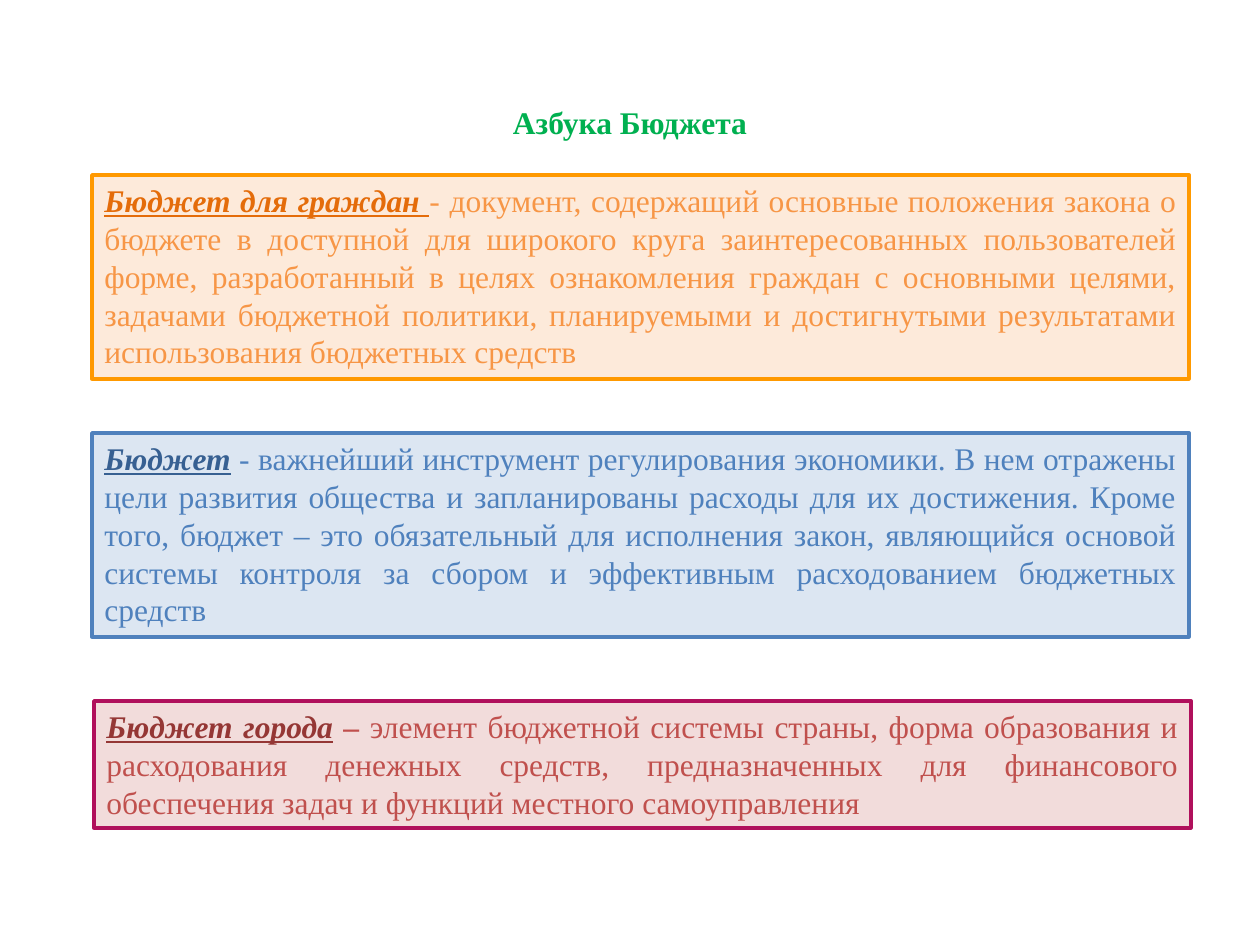
from dataclasses import dataclass

from pptx import Presentation
from pptx.dml.color import RGBColor
from pptx.enum.shapes import MSO_SHAPE
from pptx.enum.text import MSO_ANCHOR, PP_ALIGN
from pptx.util import Emu, Pt

RECTANGLE = MSO_SHAPE.RECTANGLE
TOP, BOTTOM = MSO_ANCHOR.TOP, MSO_ANCHOR.BOTTOM
CENTER, JUSTIFY = PP_ALIGN.CENTER, PP_ALIGN.JUSTIFY
TITLE_ONLY = 5
EMU_PER_PX = 914400 / 126


@dataclass(frozen=True)
class Tone:
    fill: str
    line: str
    term: str
    text: str


@dataclass(frozen=True)
class Theme:
    font: str = "Times New Roman"
    size: int = 18
    line_width: int = 2
    title: str = "00B050"
    orange: Tone = Tone("FDEADA", "FF9900", "E46C0A", "F79646")
    blue: Tone = Tone("DCE6F2", "4F81BD", "376092", "4F81BD")
    red: Tone = Tone("F2DCDB", "B0105C", "953735", "C0504D")


THEME = Theme()


def px(length):
    return Emu(round(length * EMU_PER_PX))


def add_text(paragraph, text, *, color, bold=False, italic=False, underline=False):
    run = paragraph.add_run()
    run.text = text
    font = run.font
    font.name, font.size = THEME.font, Pt(THEME.size)
    font.bold, font.italic, font.underline = bold, italic, underline
    font.color.rgb = RGBColor.from_string(color)


class SlideBuilder:
    def __init__(self, presentation, theme):
        self.theme = theme
        self.slide = presentation.slides.add_slide(presentation.slide_layouts[TITLE_ONLY])

    def title(self, text, left, top, width, height):
        shape = self.slide.shapes.title
        shape.left, shape.top, shape.width, shape.height = map(px, (left, top, width, height))
        frame = shape.text_frame
        frame.vertical_anchor = BOTTOM
        frame.margin_top = frame.margin_bottom = 0
        paragraph = frame.paragraphs[0]
        paragraph.alignment = CENTER
        add_text(paragraph, text, color=self.theme.title, bold=True)

    def definition(self, term, dash, meaning, tone, left, top, width, height, *, strong_dash=False):
        shape = self.slide.shapes.add_shape(RECTANGLE, *map(px, (left, top, width, height)))
        shape.shadow.inherit = False
        shape.fill.solid()
        shape.fill.fore_color.rgb = RGBColor.from_string(tone.fill)
        shape.line.color.rgb = RGBColor.from_string(tone.line)
        shape.line.width = Pt(self.theme.line_width)
        frame = shape.text_frame
        frame.word_wrap = True
        frame.vertical_anchor = TOP
        paragraph = frame.paragraphs[0]
        paragraph.alignment = JUSTIFY
        add_text(paragraph, term, color=tone.term, bold=True, italic=True, underline=True)
        add_text(paragraph, dash, color=tone.text, bold=strong_dash, italic=strong_dash)
        add_text(paragraph, meaning, color=tone.text)


def main():
    presentation = Presentation()
    presentation.slide_width, presentation.slide_height = px(1260), px(945)
    builder = SlideBuilder(presentation, THEME)

    # Heading
    builder.title("Азбука Бюджета", 63, 86, 1134, 55)

    # Definitions
    builder.definition(
        "Бюджет для граждан ", "- ",
        "документ, содержащий основные положения закона о бюджете в доступной для "
        "широкого круга заинтересованных пользователей форме, разработанный в целях "
        "ознакомления граждан с основными целями, задачами бюджетной политики, "
        "планируемыми и достигнутыми результатами использования бюджетных средств",
        THEME.orange, 92, 175, 1097, 204)
    builder.definition(
        "Бюджет", " - ",
        "важнейший инструмент регулирования экономики. В нем отражены цели развития "
        "общества и запланированы расходы для их достижения. Кроме того, бюджет – это "
        "обязательный для исполнения закон, являющийся основой системы контроля за "
        "сбором и эффективным расходованием бюджетных средств",
        THEME.blue, 92, 433, 1097, 204)
    builder.definition(
        "Бюджет города", " – ",
        "элемент бюджетной системы страны, форма образования и расходования денежных "
        "средств, предназначенных для финансового обеспечения задач и функций местного "
        "самоуправления",
        THEME.red, 94, 701, 1097, 127, strong_dash=True)

    presentation.save("out.pptx")


if __name__ == "__main__":
    main()
